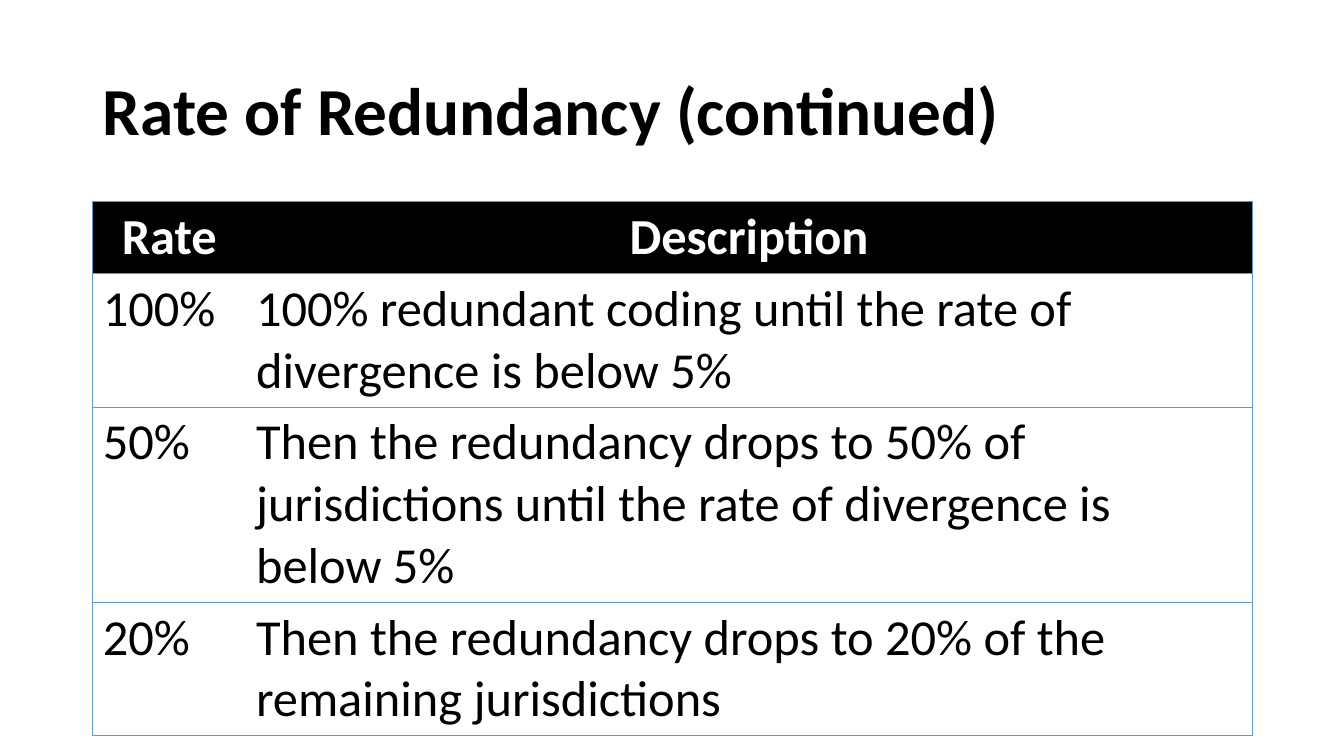
from lxml.etree import SubElement
from pptx import Presentation
from pptx.dml.color import RGBColor
from pptx.enum.text import MSO_ANCHOR, PP_ALIGN
from pptx.oxml.ns import qn
from pptx.util import Inches, Pt

FONT = "Calibri"
BLACK, WHITE, BLUE = "000000", "FFFFFF", "5B9BD5"
LEFT, WIDTH = 0.92, 11.5
COLUMN_WIDTHS = [1.52, 9.98]
ROW_HEIGHTS = [0.71, 1.32, 1.93, 1.32]
RATES = [
    ("Rate", "Description"),
    ("100%", "100% redundant coding until the rate of divergence is below 5%"),
    ("50%", "Then the redundancy drops to 50% of jurisdictions until the rate of "
            "divergence is below 5%"),
    ("20%", "Then the redundancy drops to 20% of the remaining jurisdictions"),
]


def color(value):
    return RGBColor.from_string(value)


def add_span(para, text, size, ink, bold=False):
    span = para.add_run()
    span.text = text
    span.font.name = FONT
    span.font.size = Pt(size)
    span.font.bold = bold
    span.font.color.rgb = color(ink)


def add_title(page, text):
    title = page.shapes.title
    title.left, title.top = Inches(LEFT), Inches(0.4)
    title.width, title.height = Inches(WIDTH), Inches(1.45)
    title.text_frame.word_wrap = True
    title.text_frame.vertical_anchor = MSO_ANCHOR.MIDDLE
    para = title.text_frame.paragraphs[0]
    para.alignment = PP_ALIGN.LEFT
    para.line_spacing = 0.9
    add_span(para, text, 48, BLACK, bold=True)


def set_borders(cell, visible):
    """Draw the sides named in visible (of L, R, T, B) and clear the others."""
    properties = cell._tc.get_or_add_tcPr()
    for side in "LRTB":
        line = SubElement(properties, qn(f"a:ln{side}"), w=str(Pt(0.5)))
        if side in visible:
            fill = SubElement(line, qn("a:solidFill"))
            SubElement(fill, qn("a:srgbClr"), val=BLUE)
        else:
            SubElement(line, qn("a:noFill"))


def fill_cell(cell, text, is_header, outer_side):
    set_borders(cell, outer_side + "TB")
    cell.fill.solid()
    cell.fill.fore_color.rgb = color(BLACK if is_header else WHITE)
    para = cell.text_frame.paragraphs[0]
    para.alignment = PP_ALIGN.CENTER if is_header else PP_ALIGN.LEFT
    add_span(para, text, 36, WHITE if is_header else BLACK, bold=is_header)


def add_rate_table(page):
    frame = page.shapes.add_table(
        len(RATES), len(COLUMN_WIDTHS), Inches(LEFT), Inches(2),
        Inches(WIDTH), Inches(sum(ROW_HEIGHTS)))
    table = frame.table
    table.horz_banding = False
    for column, width in zip(table.columns, COLUMN_WIDTHS):
        column.width = Inches(width)
    for row_index, (row, height) in enumerate(zip(table.rows, ROW_HEIGHTS)):
        row.height = Inches(height)
        for cell, text, side in zip(row.cells, RATES[row_index], "LR"):
            fill_cell(cell, text, row_index == 0, side)


def main():
    deck = Presentation()
    deck.slide_width, deck.slide_height = Inches(13.33), Inches(7.5)
    page = deck.slides.add_slide(deck.slide_layouts[5])
    add_title(page, "Rate of Redundancy (continued)")
    add_rate_table(page)
    deck.save("out.pptx")


if __name__ == "__main__":
    main()
